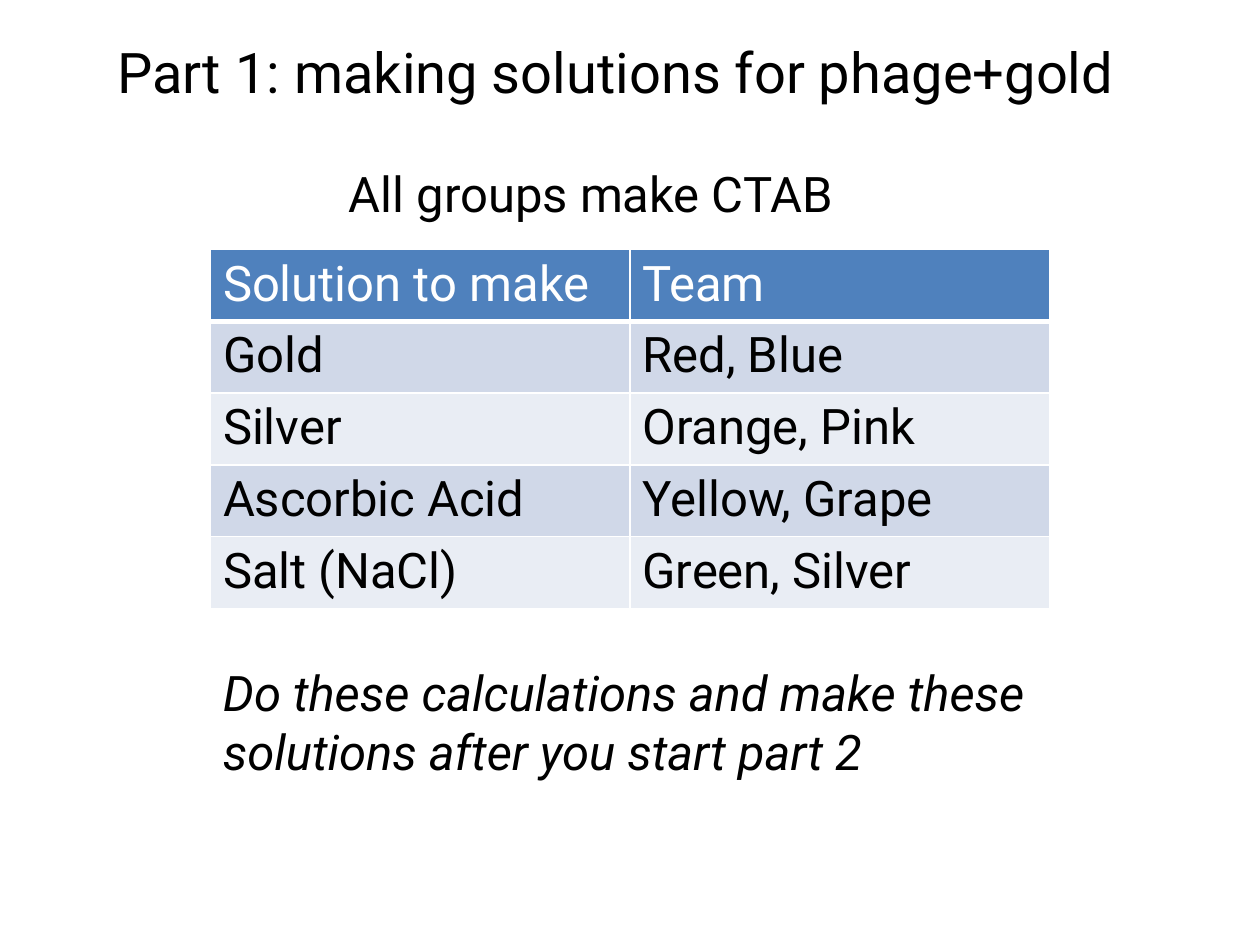
from lxml import etree
from pptx import Presentation
from pptx.dml.color import RGBColor
from pptx.enum.text import MSO_ANCHOR, MSO_AUTO_SIZE, PP_ALIGN
from pptx.oxml.ns import qn
from pptx.util import Inches, Pt

TOP = MSO_ANCHOR.TOP
LEFT = PP_ALIGN.LEFT
NO_AUTOFIT = MSO_AUTO_SIZE.NONE
TITLE_ONLY = 5

FONT = "Roboto"
COLORS = {
    "text": "000000",
    "paper": "FFFFFF",
    "header": "4F81BD",
    "odd_row": "D0D8E8",
    "even_row": "E9EDF4",
}
SOLUTIONS = [
    ("Solution to make", "Team"),
    ("Gold", "Red, Blue"),
    ("Silver", "Orange, Pink"),
    ("Ascorbic Acid", "Yellow, Grape"),
    ("Salt (NaCl)", "Green, Silver"),
]
TABLE_LEFT, TABLE_TOP = 1.67, 1.98
COLUMN_WIDTH, ROW_HEIGHT = 3.33, 0.57


def write(frame, text, size=28, color="text", italic=False):
    """Put formatted text into a shape's or a cell's text frame."""
    frame.word_wrap = True
    paragraph = frame.paragraphs[0]
    paragraph.alignment = LEFT
    run = paragraph.add_run()
    run.text = text
    run.font.name = FONT
    run.font.size = Pt(size)
    run.font.bold = False
    run.font.italic = italic
    run.font.color.rgb = RGBColor.from_string(COLORS[color])


def add_title(slide, text, left, top, width, height):
    title = slide.shapes.title
    title.left, title.top = Inches(left), Inches(top)
    title.width, title.height = Inches(width), Inches(height)
    title.text_frame.auto_size = NO_AUTOFIT
    title.text_frame.vertical_anchor = TOP
    write(title.text_frame, text, size=32)


def add_note(slide, text, left, top, width, height, **text_format):
    note = slide.shapes.add_textbox(
        Inches(left), Inches(top), Inches(width), Inches(height))
    write(note.text_frame, text, **text_format)


def add_borders(cell, bottom_width):
    properties = cell._tc.get_or_add_tcPr()
    widths = {"a:lnL": 1, "a:lnR": 1, "a:lnT": 1, "a:lnB": bottom_width}
    for side, width in widths.items():
        border = etree.SubElement(properties, qn(side), w=str(Pt(width)))
        fill = etree.SubElement(border, qn("a:solidFill"))
        etree.SubElement(fill, qn("a:srgbClr"), val=COLORS["paper"])


def add_solution_table(slide):
    row_count, column_count = len(SOLUTIONS), len(SOLUTIONS[0])
    table = slide.shapes.add_table(
        row_count, column_count, Inches(TABLE_LEFT), Inches(TABLE_TOP),
        Inches(column_count * COLUMN_WIDTH),
        Inches(row_count * ROW_HEIGHT)).table
    for row, entries in enumerate(SOLUTIONS):
        is_header = row == 0
        band = "header" if is_header else "odd_row" if row % 2 else "even_row"
        for column, entry in enumerate(entries):
            cell = table.cell(row, column)
            write(cell.text_frame, entry,
                  color="paper" if is_header else "text")
            add_borders(cell, bottom_width=3 if is_header else 1)
            cell.fill.solid()
            cell.fill.fore_color.rgb = RGBColor.from_string(COLORS[band])


def main():
    deck = Presentation()
    deck.slide_width, deck.slide_height = Inches(10), Inches(7.5)
    slide = deck.slides.add_slide(deck.slide_layouts[TITLE_ONLY])

    # Heading
    add_title(slide, "Part 1: making solutions for phage+gold",
              0.83, 0.25, 9.33, 0.64)

    # Team assignments
    add_solution_table(slide)

    # Instructions below and above the table
    add_note(slide, "Do these calculations and make these solutions "
             "after you start part 2",
             TABLE_LEFT, 5.21, 6.58, 1.04, italic=True)
    add_note(slide, "All groups make CTAB", 2.67, 1.25, 4.25, 0.57)

    deck.save("out.pptx")


if __name__ == "__main__":
    main()
